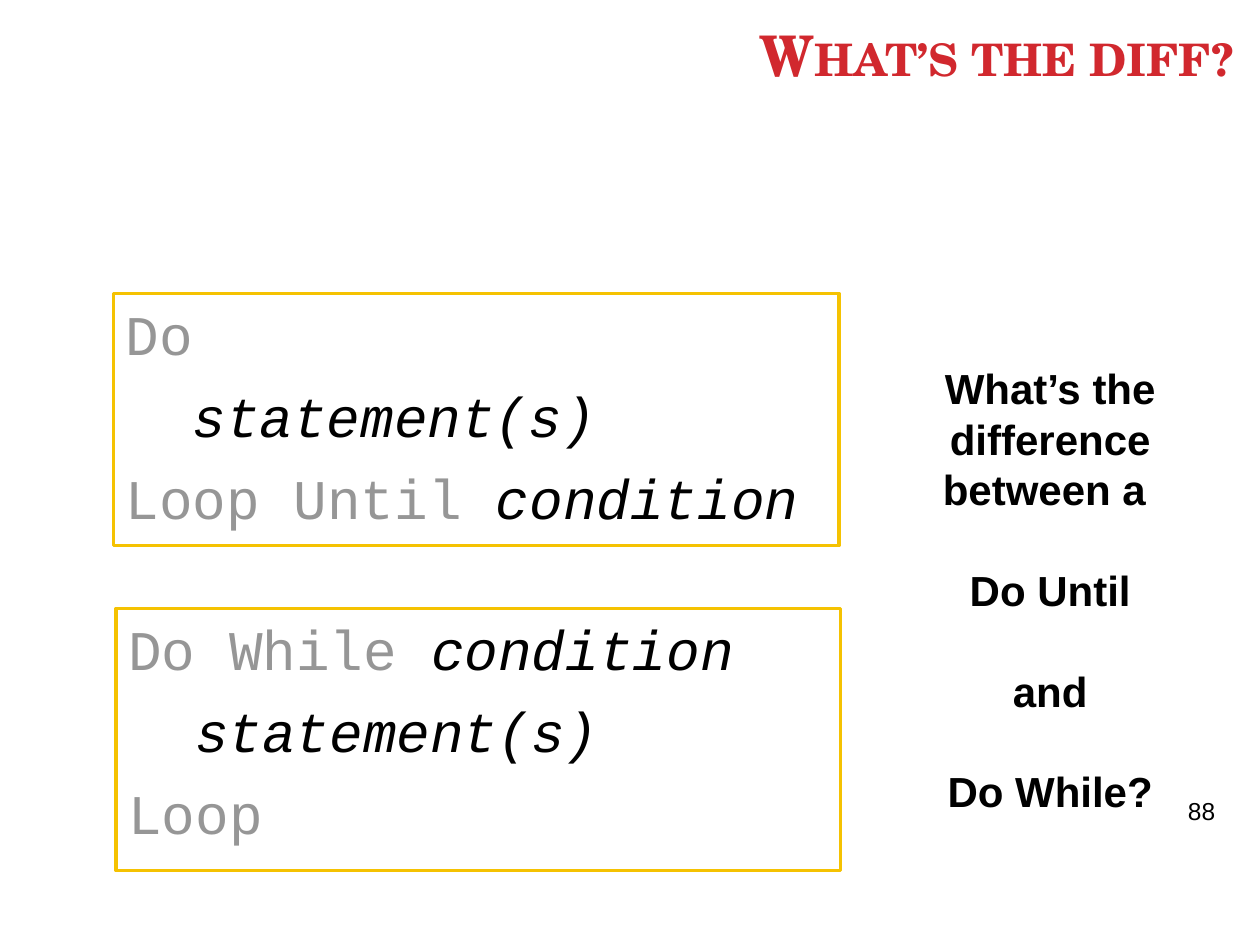
"""Build a slide comparing the Do Until and Do While loops."""
import pptx
import pptx.dml.color
import pptx.enum.shapes
import pptx.enum.text
import pptx.util

Inches = pptx.util.Inches
Pt = pptx.util.Pt
RGBColor = pptx.dml.color.RGBColor
ALIGN = pptx.enum.text.PP_ALIGN
ANCHOR = pptx.enum.text.MSO_ANCHOR

RED = RGBColor(0xD1, 0x28, 0x2E)
GOLD = RGBColor(0xF5, 0xC2, 0x01)
GRAY = RGBColor(0x96, 0x96, 0x96)
BLACK = RGBColor(0, 0, 0)
WHITE = RGBColor(0xFF, 0xFF, 0xFF)


def add_run(p, text, font="Arial", size=24, color=BLACK, bold=False, italic=False):
    r = p.add_run()
    r.text = text
    r.font.name = font
    r.font.size = Pt(size)
    r.font.color.rgb = color
    r.font.bold = bold
    r.font.italic = italic
    return r


prs = pptx.Presentation()
prs.slide_width = Inches(10)
prs.slide_height = Inches(7.5)
s = prs.slides.add_slide(prs.slide_layouts[5])

title = s.shapes.title
title.left, title.top = Inches(0.17), Inches(0.14)
title.width, title.height = Inches(9.72), Inches(0.61)
tf = title.text_frame
tf.vertical_anchor = ANCHOR.BOTTOM
tf.auto_size = pptx.enum.text.MSO_AUTO_SIZE.NONE
p = tf.paragraphs[0]
p.alignment = ALIGN.RIGHT
r = add_run(p, "What’s the diff?", font="TeX Gyre Schola", size=32, color=RED, bold=True)
r.font._element.set("cap", "small")

tb = s.shapes.add_textbox(Inches(9.33), Inches(6.27), Inches(0.67), Inches(0.57))
tb.text_frame.word_wrap = True
add_run(tb.text_frame.paragraphs[0], "88", size=14)

KEYWORD = {"color": GRAY}
SLOT = {"italic": True}
body = [("statement(s)", SLOT)]
loops = [
    ((0.9, 2.33, 5.76, 2),
     [[("Do", KEYWORD)], body, [("Loop Until ", KEYWORD), ("condition", SLOT)]]),
    ((0.92, 4.83, 5.75, 2.08),
     [[("Do While ", KEYWORD), ("condition", SLOT)], body, [("Loop", KEYWORD)]]),
]
for box, lines in loops:
    sp = s.shapes.add_shape(pptx.enum.shapes.MSO_SHAPE.RECTANGLE, *map(Inches, box))
    sp.shadow.inherit = False
    sp.fill.solid()
    sp.fill.fore_color.rgb = WHITE
    sp.line.color.rgb = GOLD
    sp.line.width = Pt(2)
    tf = sp.text_frame
    tf.word_wrap = True
    tf.vertical_anchor = ANCHOR.TOP
    for i, line in enumerate(lines):
        p = tf.add_paragraph() if i else tf.paragraphs[0]
        p.alignment = ALIGN.LEFT
        p.space_before = Pt(8.5)
        margin, indent = (0.53, 0) if line is body else (0.38, -0.38)
        pPr = p._p.get_or_add_pPr()
        pPr.set("marL", str(Inches(margin)))
        pPr.set("indent", str(Inches(indent)))
        for text, style in line:
            add_run(p, text, font="Courier New", size=32, **style)

tb = s.shapes.add_textbox(Inches(7.25), Inches(2.83), Inches(2.17), Inches(3.74))
tf = tb.text_frame
tf.word_wrap = True
question = ["What’s the difference between a ", "Do Until", "and", "Do While?"]
for i, text in enumerate(question):
    p = tf.add_paragraph() if i else tf.paragraphs[0]
    p.alignment = ALIGN.CENTER
    p.line_spacing = Pt(28.8)
    p.space_before = Pt(28.8 if i else 0)
    add_run(p, text, bold=True)

prs.save("out.pptx")
